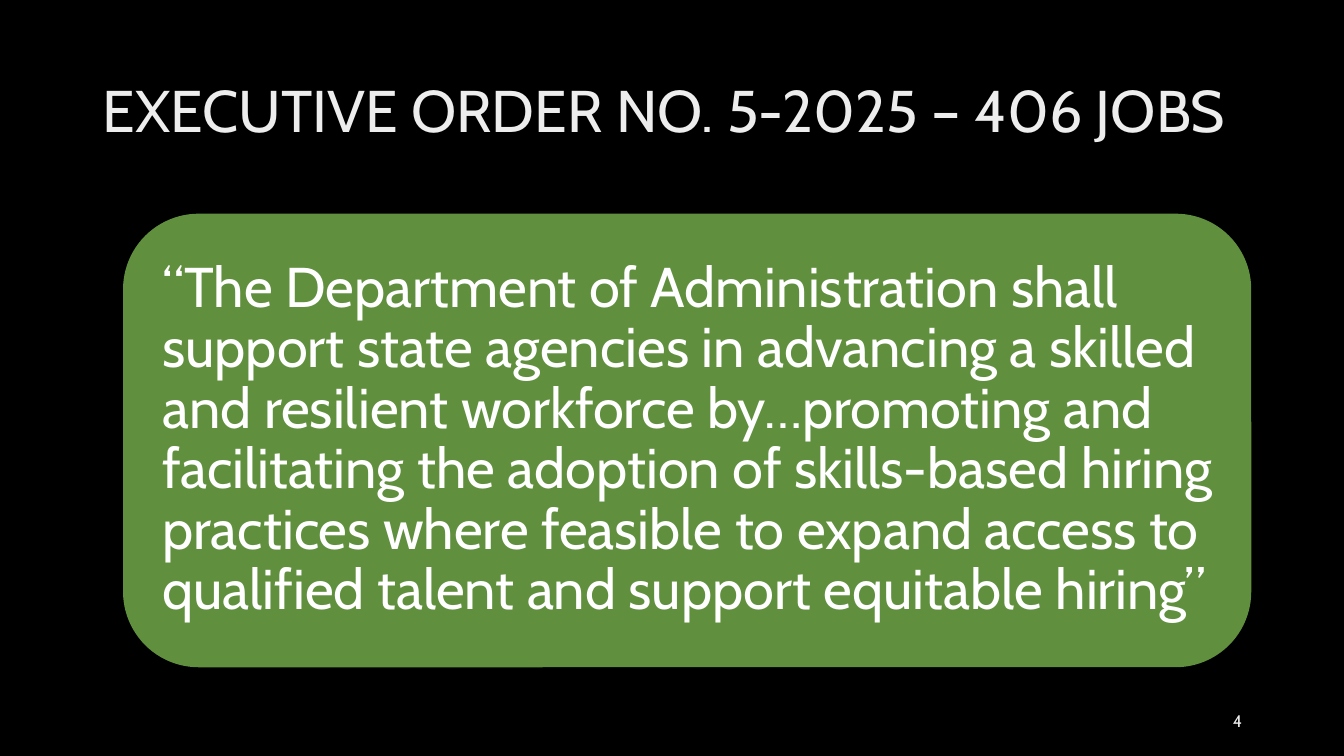
from pptx import Presentation
from pptx.dml.color import RGBColor
from pptx.enum.shapes import MSO_SHAPE
from pptx.enum.text import MSO_ANCHOR, MSO_AUTO_SIZE, PP_ALIGN
from pptx.util import Inches, Pt

ROUNDED = MSO_SHAPE.ROUNDED_RECTANGLE
MIDDLE = MSO_ANCHOR.MIDDLE
NO_AUTOFIT = MSO_AUTO_SIZE.NONE
LEFT, RIGHT = PP_ALIGN.LEFT, PP_ALIGN.RIGHT
TITLE_ONLY = 5
FONT = "Cabin"
COLORS = {
    "background": "000000",
    "heading": "EDEDED",
    "panel": "608F3D",
    "quote": "FFFFFF",
}
HEADING = "EXECUTIVE ORDER NO. 5-2025 – 406 JOBS"
QUOTE = (
    "“The Department of Administration shall support state agencies in "
    "advancing a skilled and resilient workforce by…promoting and "
    "facilitating the adoption of skills-based hiring practices where "
    "feasible to expand access to qualified talent and support equitable "
    "hiring”"
)


def color(name):
    return RGBColor.from_string(COLORS[name])


def write(shape, text, size, color_name, align=LEFT, spacing=0.9):
    """Put one formatted paragraph, vertically centred, into a shape."""
    frame = shape.text_frame
    frame.text = text
    frame.word_wrap = True
    frame.auto_size = NO_AUTOFIT
    frame.vertical_anchor = MIDDLE
    paragraph = frame.paragraphs[0]
    paragraph.alignment = align
    paragraph.line_spacing = spacing
    paragraph.font.name = FONT
    paragraph.font.size = Pt(size)
    paragraph.font.color.rgb = color(color_name)


def add_heading(slide):
    heading = slide.shapes.title
    heading.left, heading.top = Inches(0.92), Inches(0.4)
    heading.width, heading.height = Inches(11.5), Inches(1.45)
    write(heading, HEADING, 42, "heading")


def add_quote_panel(slide):
    panel = slide.shapes.add_shape(
        ROUNDED, Inches(1.22), Inches(2.12), Inches(11.19), Inches(4.5))
    panel.shadow.inherit = False
    panel.fill.solid()
    panel.fill.fore_color.rgb = color("panel")
    panel.line.fill.background()
    frame = panel.text_frame
    frame.margin_left, frame.margin_right = Inches(0.17), Inches(0.1)
    frame.margin_top = frame.margin_bottom = Inches(0.17)
    write(panel, QUOTE, 40, "quote")


def add_page_number(slide, number):
    page = slide.shapes.add_textbox(
        Inches(9.42), Inches(6.95), Inches(3), Inches(0.4))
    write(page, str(number), 12, "heading", RIGHT, 1.0)


def main():
    prs = Presentation()
    prs.slide_width, prs.slide_height = Inches(13.33), Inches(7.5)
    slide = prs.slides.add_slide(prs.slide_layouts[TITLE_ONLY])

    # Black background
    slide.background.fill.solid()
    slide.background.fill.fore_color.rgb = color("background")

    # Heading, quotation and page number
    add_heading(slide)
    add_quote_panel(slide)
    add_page_number(slide, 4)

    prs.save("out.pptx")


if __name__ == "__main__":
    main()
